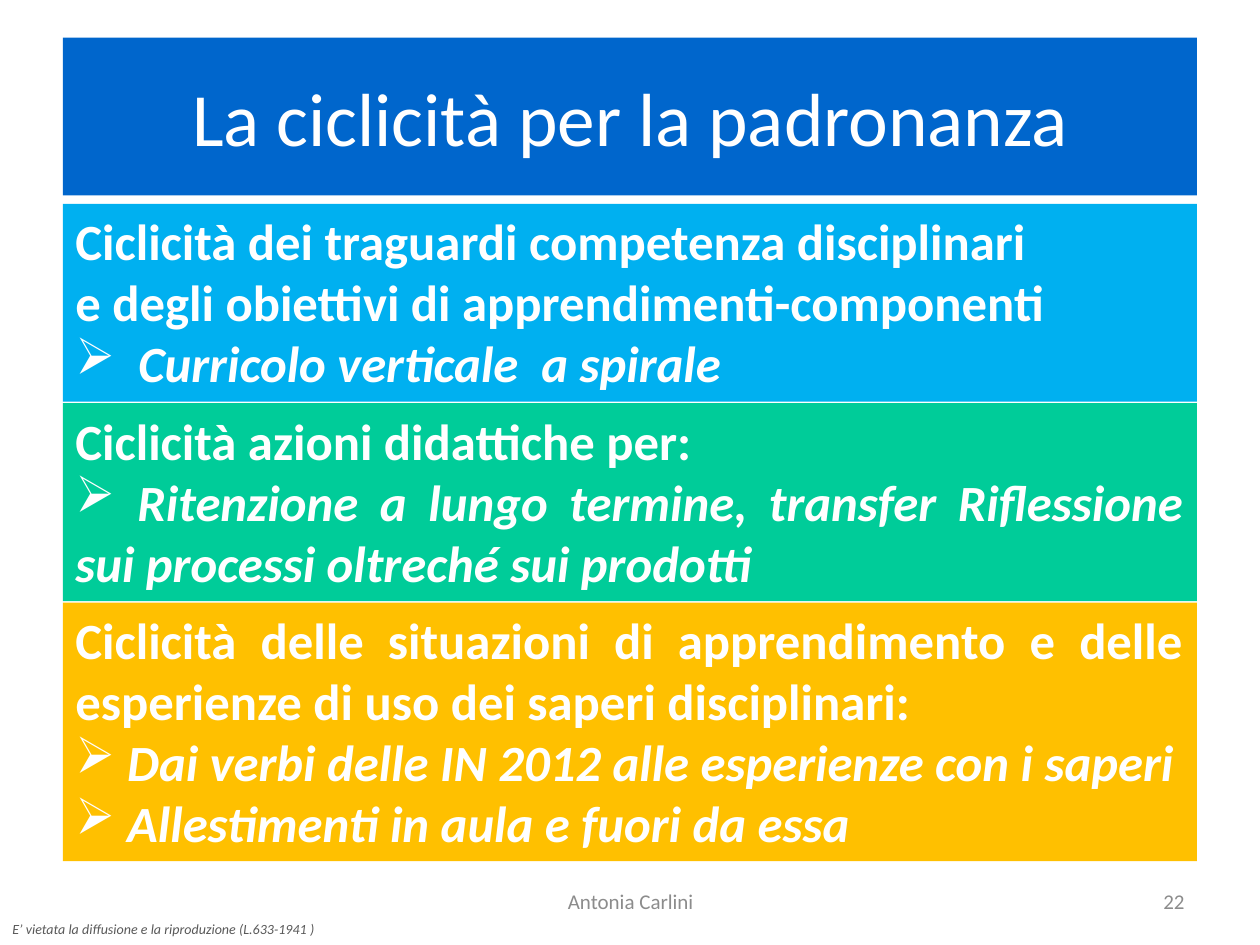
from dataclasses import dataclass

import pptx
import pptx.dml.color
import pptx.enum.shapes
import pptx.enum.text
import pptx.oxml
import pptx.oxml.ns
import pptx.util

Cm = pptx.util.Cm
Align = pptx.enum.text.PP_ALIGN
Anchor = pptx.enum.text.MSO_ANCHOR

COLOURS = {
    "title": "0066CC",
    "goals": "00B0F0",
    "actions": "00CC99",
    "situations": "FFC000",
    "white": "FFFFFF",
    "footer": "8C8C8C",
    "notice": "595959",
}
FONT = "Calibri"
LEFT, WIDTH = 1.27, 22.86
BANDS_TOP, BAND_GAP = 4.11, 0.03


@dataclass
class Line:
    text: str
    bullet: bool = False
    hanging: float = 0


@dataclass
class Band:
    colour: str
    height: float
    lines: list[Line]


BANDS = [
    Band("goals", 3.99, [
        Line("Ciclicità dei traguardi competenza disciplinari "),
        Line("e degli obiettivi di apprendimenti-componenti"),
        Line("Curricolo verticale  a spirale", bullet=True, hanging=1.27),
    ]),
    Band("actions", 3.99, [
        Line("Ciclicità azioni didattiche per:"),
        Line(" Ritenzione a lungo termine, transfer Riflessione sui processi "
             "oltreché sui prodotti", bullet=True),
    ]),
    Band("situations", 5.21, [
        Line("Ciclicità delle situazioni di apprendimento e delle esperienze "
             "di uso dei saperi disciplinari:"),
        Line(" Dai verbi delle IN 2012 alle esperienze con i saperi", bullet=True),
        Line(" Allestimenti in aula e fuori da essa", bullet=True),
    ]),
]


def rgb(name: str) -> pptx.dml.color.RGBColor:
    return pptx.dml.color.RGBColor.from_string(COLOURS[name])


def write(para, text: str, *, size: float, colour: str, align=Align.LEFT,
          bold: bool = False, italic: bool = False) -> None:
    """Put formatted text into a paragraph."""
    para.alignment = align
    span = para.add_run()
    span.text = text
    span.font.name = FONT
    span.font.size = pptx.util.Pt(size)
    span.font.bold = bold
    span.font.italic = italic
    span.font.color.rgb = rgb(colour)


def add_bullet(para, hanging: float) -> None:
    """Give a paragraph an arrow bullet and a hanging indent in cm."""
    properties = para._p.get_or_add_pPr()
    properties.set("marL", str(Cm(hanging)))
    properties.set("indent", str(-Cm(hanging)))
    bullet = pptx.oxml.parse_xml(
        f'<a:buChar {pptx.oxml.ns.nsdecls("a")} char="➢"/>')
    properties.append(bullet)


def add_panel(page, top: float, height: float, colour: str, anchor=Anchor.TOP):
    """Draw a full-width filled rectangle and return its text frame."""
    box = page.shapes.add_shape(
        pptx.enum.shapes.MSO_SHAPE.RECTANGLE,
        Cm(LEFT), Cm(top), Cm(WIDTH), Cm(height))
    box.shadow.inherit = False
    box.fill.solid()
    box.fill.fore_color.rgb = rgb(colour)
    box.line.fill.background()
    box.text_frame.word_wrap = True
    box.text_frame.vertical_anchor = anchor
    return box.text_frame


def add_band(page, top: float, band: Band) -> None:
    frame = add_panel(page, top, band.height, band.colour)
    for index, line in enumerate(band.lines):
        para = frame.add_paragraph() if index else frame.paragraphs[0]
        write(para, line.text, size=29, colour="white", align=Align.JUSTIFY,
              bold=True, italic=line.bullet)
        if line.bullet:
            add_bullet(para, line.hanging)


def add_label(page, left: float, top: float, width: float, height: float,
              text: str, anchor=Anchor.MIDDLE, **text_format) -> None:
    box = page.shapes.add_textbox(Cm(left), Cm(top), Cm(width), Cm(height))
    box.text_frame.word_wrap = True
    box.text_frame.vertical_anchor = anchor
    write(box.text_frame.paragraphs[0], text, **text_format)


def main() -> None:
    deck = pptx.Presentation()
    deck.slide_width, deck.slide_height = Cm(25.4), Cm(19.05)
    page = deck.slides.add_slide(deck.slide_layouts[6])

    # Copyright notice
    add_label(page, 0, 18.44, 6.71, 0.61,
              "E’ vietata la diffusione e la riproduzione (L.633-1941 )",
              anchor=Anchor.TOP, size=8, colour="notice", italic=True)

    # Title
    title = add_panel(page, 0.76, 3.18, "title", Anchor.MIDDLE)
    write(title.paragraphs[0], "La ciclicità per la padronanza",
          size=43, colour="white", align=Align.CENTER)

    # Stacked bands
    top = BANDS_TOP
    for band in BANDS:
        add_band(page, top, band)
        top += band.height + BAND_GAP

    # Footer
    add_label(page, 18.21, 17.65, 5.92, 1.02, "22",
              size=12, colour="footer", align=Align.RIGHT)
    add_label(page, 8.69, 17.65, 8.05, 1.02, "Antonia Carlini",
              size=12, colour="footer", align=Align.CENTER)

    deck.save("out.pptx")


if __name__ == "__main__":
    main()
